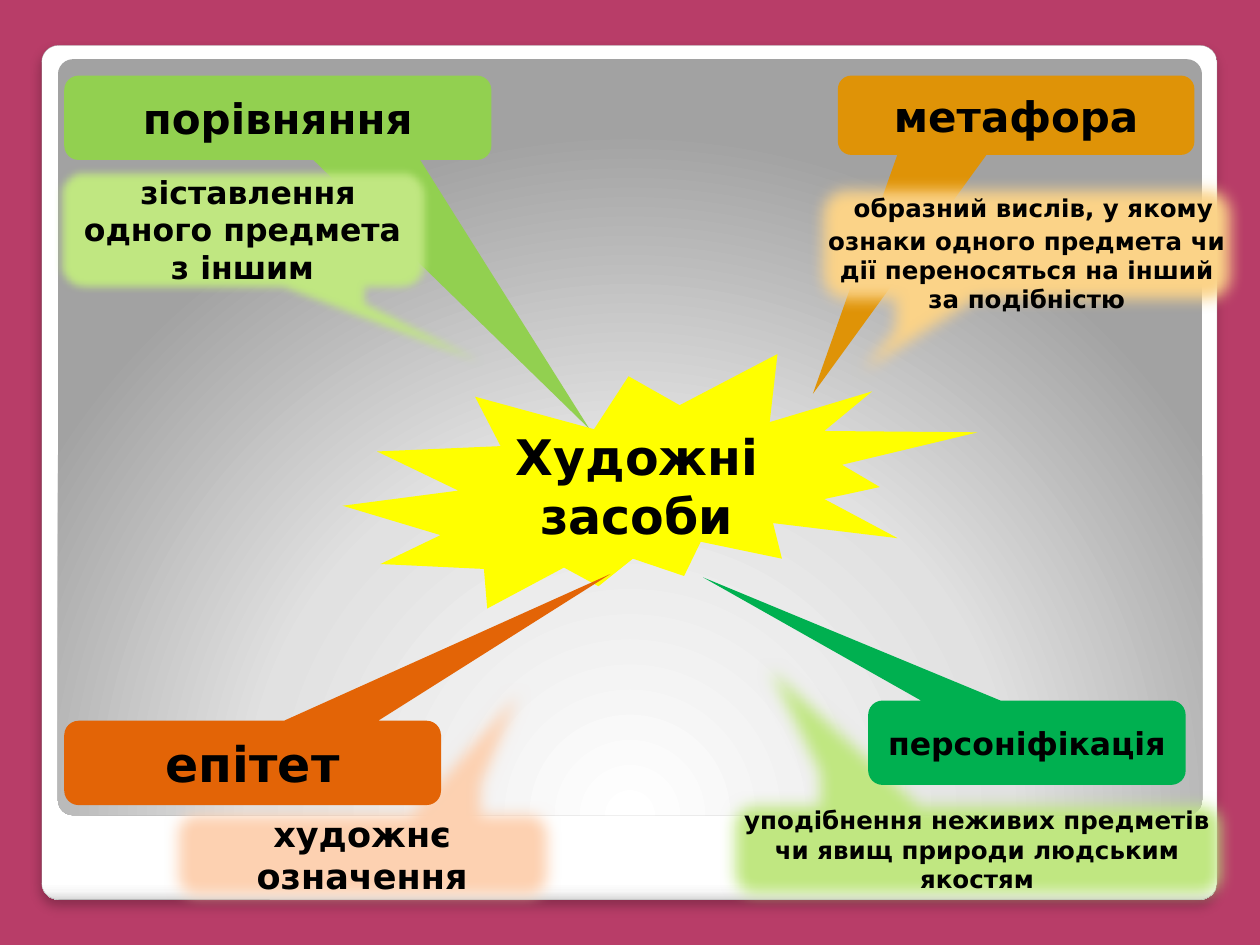
import pptx
import pptx.util
import pptx.dml.color
import pptx.enum.shapes
import pptx.enum.text
import pptx.oxml
import pptx.oxml.ns

SHAPE = pptx.enum.shapes.MSO_SHAPE
CALLOUT = SHAPE.ROUNDED_RECTANGULAR_CALLOUT

THEME = {
    "font": "DejaVu Sans",
    "text": "000000", "light": "FFFFFF", "back": "B83D68", "edge": "A4A4A4",
    "amber": "DF9307", "pale_amber": "FBD388",
    "lime": "92D050", "pale_lime": "C0E781",
    "orange": "E36406", "pale_orange": "FDD1B1",
    "green": "00B050", "yellow": "FFFF00",
    "hero": 28, "head": 24, "sub": 20, "body": 18, "small": 14,
    "frame": [(0, "FFFFFF"), (98, "FFFFFF"), (99, "F7F7F7"), (100, "DADADA")],
    "glow": [(0, "FFFFFF"), (55, "E1E1E1"), (100, "A2A2A2")],
}

SIZE = (10, 7.5)

# Boxes are left, top, width, height in percent of the slide; tips are relative to the box.
FRAME = (3.3, 4.8, 93.3, 90.4)
PANEL = (4.6, 6.27, 90.8, 80)
ITEMS = [
    dict(text="метафора", box=(66.5, 8, 28.3, 8.4), tip=(-0.57, 3.51),
         fill="amber", size="head"),
    dict(text="уподібнення неживих предметів чи явищ природи людським якостям",
         box=(57.1, 83.6, 40.9, 12.53), tip=(-0.53, -2.27),
         fill="pale_lime", size="small", soft=9),
    dict(text="порівняння", box=(5.1, 8, 33.9, 8.93), tip=(0.73, 3.69),
         fill="lime", size="head"),
    dict(text="персоніфікація", box=(68.9, 74.13, 25.2, 8.93), tip=(-1.02, -1.96),
         fill="green", size="body"),
    dict(text="Художні засоби", box=(27.2, 37.47, 50.4, 26.93),
         fill="yellow", size="hero"),
    dict(text="художнє означення", box=(13, 84.67, 31.5, 11.6), tip=(0.55, -2.4),
         fill="pale_orange", size="sub", soft=9),
    dict(text="епітет", box=(5.1, 76.27, 29.9, 8.93), tip=(0.95, -2.24),
         fill="orange", size="hero"),
    dict(text=" зіставлення одного предмета з іншим",
         box=(4.3, 17.47, 29.9, 13.6), tip=(1.09, 1.62),
         fill="pale_lime", size="body", soft=5),
    dict(text="образний вислів, у якому ознаки одного предмета чи дії "
              "переносяться на інший за подібністю",
         box=(64.2, 18.53, 34.6, 14.67), tip=(-0.59, 1.5),
         fill="pale_amber", size="small", soft=9, lead=" "),
]


def rgb(name):
    return pptx.dml.color.RGBColor.from_string(THEME.get(name, name))


def xml(text):
    return pptx.oxml.parse_xml(text.replace(">", " %s>" % pptx.oxml.ns.nsdecls("a"), 1)
                               if "/>" not in text.split(">")[0] + ">"
                               else text.replace("/>", " %s/>" % pptx.oxml.ns.nsdecls("a"), 1))


def add_shape(s, kind, box, adjust=()):
    places = [pptx.util.Inches(v / 100 * SIZE[i % 2]) for i, v in enumerate(box)]
    sp = s.shapes.add_shape(kind, *places)
    for i, value in enumerate(adjust):
        sp.adjustments[i] = value
    sp.shadow.inherit = False
    sp.line.fill.background()
    return sp


def add_effect(sp, text):
    sp._element.spPr.find(pptx.oxml.ns.qn("a:effectLst")).append(xml(text))


def fill_gradient(sp, stops, direction):
    sp.fill.gradient()
    grad = sp._element.spPr.find(pptx.oxml.ns.qn("a:gradFill"))
    for child in list(grad):
        grad.remove(child)
    marks = "".join(f'<a:gs pos="{pos * 1000}"><a:srgbClr val="{color}"/></a:gs>'
                    for pos, color in stops)
    grad.append(xml(f"<a:gsLst>{marks}</a:gsLst>"))
    grad.append(xml(direction))


def add_text(p, text, size="body", color="text", bold=True):
    r = p.add_run()
    r.text = text
    r.font.name = THEME["font"]
    r.font.size = pptx.util.Pt(THEME[size])
    r.font.bold = bold
    r.font.color.rgb = rgb(color)


def add_item(s, text, box, fill, size, tip=None, soft=0, lead=""):
    if tip:
        sp = add_shape(s, CALLOUT, box, (*tip, 0.17))
    else:
        sp = add_shape(s, SHAPE.EXPLOSION2, box)
    sp.fill.solid()
    sp.fill.fore_color.rgb = rgb(fill)
    if soft:
        add_effect(sp, f'<a:softEdge rad="{pptx.util.Pt(soft)}"/>')
    tf = sp.text_frame
    tf.word_wrap = True
    tf.vertical_anchor = pptx.enum.text.MSO_ANCHOR.MIDDLE
    p = tf.paragraphs[0]
    p.alignment = pptx.enum.text.PP_ALIGN.CENTER
    if lead:
        add_text(p, lead, size="head", color="light", bold=False)
    add_text(p, text, size=size)


def main():
    prs = pptx.Presentation()
    prs.slide_width, prs.slide_height = map(pptx.util.Inches, SIZE)
    s = prs.slides.add_slide(prs.slide_layouts[6])
    s.background.fill.solid()
    s.background.fill.fore_color.rgb = rgb("back")

    frame = add_shape(s, SHAPE.ROUNDED_RECTANGLE, FRAME, (0.02,))
    fill_gradient(frame, THEME["frame"], '<a:lin ang="5400000" scaled="0"/>')
    frame.line.color.rgb = rgb("edge")
    frame.line.width = pptx.util.Pt(0.16)
    add_effect(frame, f'<a:outerShdw blurRad="{pptx.util.Pt(6)}" dist="{pptx.util.Pt(4)}" '
                      'dir="5400000"><a:srgbClr val="000000"><a:alpha val="25000"/>'
                      '</a:srgbClr></a:outerShdw>')

    panel = add_shape(s, SHAPE.ROUNDED_RECTANGLE, PANEL, (0.02,))
    fill_gradient(panel, THEME["glow"],
                  '<a:path path="circle"><a:fillToRect l="50000" t="175000" '
                  'r="50000" b="-75000"/></a:path>')

    for item in ITEMS:
        add_item(s, **item)
    prs.save("out.pptx")


if __name__ == "__main__":
    main()
